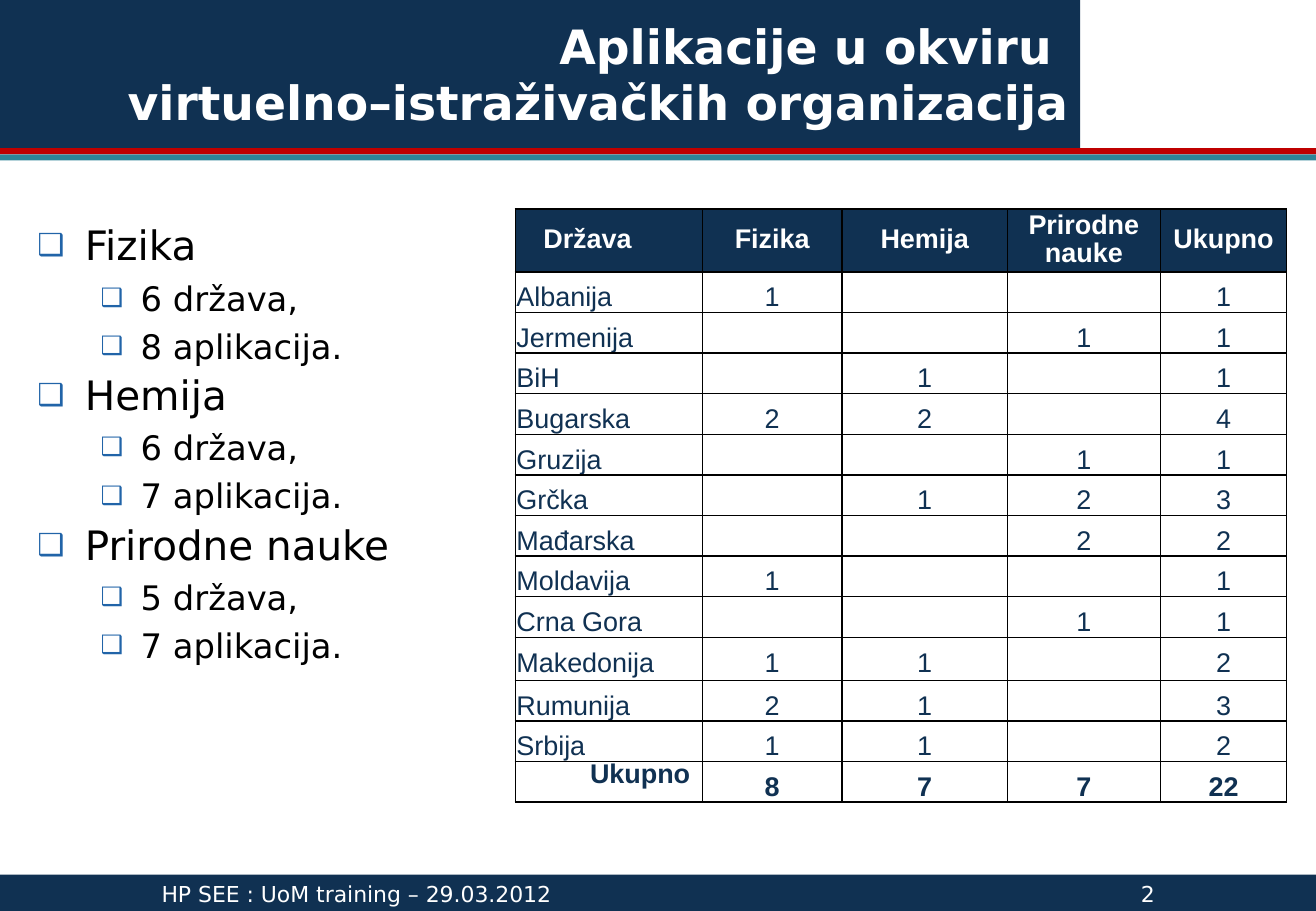
from dataclasses import dataclass

from lxml.etree import SubElement
from pptx import Presentation
from pptx.dml.color import RGBColor
from pptx.enum.shapes import MSO_SHAPE
from pptx.enum.text import MSO_ANCHOR, MSO_AUTO_SIZE, PP_ALIGN
from pptx.oxml.ns import qn
from pptx.util import Inches, Pt


@dataclass(frozen=True)
class Theme:
    navy: str = "103152"
    teal: str = "2E8497"
    red: str = "BF0000"
    blue: str = "2164A8"
    white: str = "FFFFFF"
    black: str = "000000"
    sans: str = "DejaVu Sans"
    grid: str = "Arial"
    title: int = 28
    topic: int = 24
    point: int = 20
    cell: int = 16
    foot: int = 13


THEME = Theme()
TITLE = "Aplikacije u okviru \vvirtuelno–istraživačkih organizacija"
TOPICS = [("Fizika", 6, 8), ("Hemija", 6, 7), ("Prirodne nauke", 5, 7)]
HEADS = ["Država", "Fizika", "Hemija", "Prirodne nauke", "Ukupno"]
LANDS = [
    ("Albanija", 1, 0, 0),
    ("Jermenija", 0, 0, 1),
    ("BiH", 0, 1, 0),
    ("Bugarska", 2, 2, 0),
    ("Gruzija", 0, 0, 1),
    ("Grčka", 0, 1, 2),
    ("Mađarska", 0, 0, 2),
    ("Moldavija", 1, 0, 0),
    ("Crna Gora", 0, 0, 1),
    ("Makedonija", 1, 1, 0),
    ("Rumunija", 2, 1, 0),
    ("Srbija", 1, 1, 0),
]
WIDTHS = [1.54, 1.15, 1.36, 1.26, 1.04]
HEIGHTS = [0.52] + [0.33] * 8 + [0.34, 0.35] + [0.33] * 3


def put(para, text, size, color, font=THEME.sans, bold=False,
        align=PP_ALIGN.LEFT, line=None, before=None):
    para.text = text
    para.alignment = align
    if line:
        para.line_spacing = line
    if before:
        para.space_before = Pt(before)
    for run in para.runs:
        run.font.size = Pt(size)
        run.font.name = font
        run.font.bold = bold
        run.font.color.rgb = RGBColor.from_string(color)


def paint(item, color):
    item.fill.solid()
    item.fill.fore_color.rgb = RGBColor.from_string(color)


def mark(para, left, hang):
    """Give the paragraph a coloured box bullet with a hanging indent."""
    props = para._p.get_or_add_pPr()
    props.set("marL", str(Inches(left)))
    props.set("indent", str(Inches(-hang)))
    tint = SubElement(props, qn("a:buClr"))
    SubElement(tint, qn("a:srgbClr"), val=THEME.blue)
    SubElement(props, qn("a:buSzPct"), val="75000")
    SubElement(props, qn("a:buFont"), typeface=THEME.sans)
    SubElement(props, qn("a:buChar"), char="❑")


def edge(cell):
    """Draw a thin line on all four sides of the cell."""
    props = cell._tc.get_or_add_tcPr()
    for spot, side in enumerate(("lnL", "lnR", "lnT", "lnB")):
        line = props.makeelement(qn(f"a:{side}"), {"w": str(Pt(1))})
        fill = SubElement(line, qn("a:solidFill"))
        SubElement(fill, qn("a:srgbClr"), val=THEME.black)
        props.insert(spot, line)


class Page:
    def __init__(self, deck, theme):
        self.theme = theme
        self.slide = deck.slides.add_slide(deck.slide_layouts[5])

    def bar(self, top, height, color):
        bar = self.slide.shapes.add_shape(
            MSO_SHAPE.RECTANGLE, 0, Inches(top), Inches(10.83), Inches(height))
        bar.shadow.inherit = False
        paint(bar, color)
        bar.line.fill.background()
        return bar

    def title(self, text):
        head = self.slide.shapes.title
        head.left, head.top = Inches(-0.01), Inches(-0.01)
        head.width, head.height = Inches(8.9), Inches(1.23)
        paint(head, self.theme.navy)
        frame = head.text_frame
        frame.auto_size = MSO_AUTO_SIZE.NONE
        frame.vertical_anchor = MSO_ANCHOR.MIDDLE
        put(frame.paragraphs[0], text, self.theme.title, self.theme.white,
            bold=True, align=PP_ALIGN.RIGHT)

    def topics(self, topics):
        box = self.slide.shapes.add_textbox(
            Inches(0.21), Inches(1.81), Inches(3.82), Inches(5.38))
        frame = box.text_frame
        frame.word_wrap = True
        for spot, (name, lands, apps) in enumerate(topics):
            para = frame.add_paragraph() if spot else frame.paragraphs[0]
            mark(para, 0.39, 0.39)
            put(para, name, self.theme.topic, self.theme.black,
                line=0.9, before=5.6 if spot else None)
            for text in (f"{lands} država,", f"{apps} aplikacija."):
                para = frame.add_paragraph()
                para.level = 1
                mark(para, 0.85, 0.33)
                put(para, text, self.theme.point, self.theme.black, before=4.6)

    def table(self, rows):
        last = len(rows) - 1
        table = self.slide.shapes.add_table(
            len(rows), len(WIDTHS), Inches(4.24), Inches(1.72),
            Inches(sum(WIDTHS)), Inches(sum(HEIGHTS))).table
        table.first_row = table.horz_banding = False
        for col, width in zip(table.columns, WIDTHS):
            col.width = Inches(width)
        for r, (row, height) in enumerate(zip(rows, HEIGHTS)):
            table.rows[r].height = Inches(height)
            for c, value in enumerate(row):
                cell = table.cell(r, c)
                cell.margin_left = cell.margin_right = Inches(0.01)
                cell.margin_top = cell.margin_bottom = 0
                paint(cell, self.theme.white if r else self.theme.navy)
                edge(cell)
                align, line = PP_ALIGN.CENTER, 24
                if r == 0:
                    cell.vertical_anchor = MSO_ANCHOR.MIDDLE
                    line = 16.5
                elif c == 0 and r == last:
                    align, line = PP_ALIGN.RIGHT, 16.5
                elif c == 0:
                    align = PP_ALIGN.LEFT
                put(cell.text_frame.paragraphs[0], str(value or ""),
                    self.theme.cell,
                    self.theme.navy if r else self.theme.white,
                    font=self.theme.grid, bold=r in (0, last),
                    align=align, line=Pt(line))
        table.cell(0, 0).margin_right = Inches(0.36)
        table.cell(last, 0).margin_right = Inches(0.1)

    def foot(self, text, page):
        bar = self.bar(7.2, 0.32, self.theme.navy)
        frame = bar.text_frame
        frame.margin_left = Inches(1.33)
        frame.vertical_anchor = MSO_ANCHOR.MIDDLE
        para = frame.paragraphs[0]
        tabs = SubElement(para._p.get_or_add_pPr(), qn("a:tabLst"))
        SubElement(tabs, qn("a:tab"), pos=str(Inches(8.06)), algn="l")
        put(para, f"{text}\t{page}", self.theme.foot, self.theme.white)


def main():
    deck = Presentation()
    deck.slide_width, deck.slide_height = Inches(10.83), Inches(7.5)
    page = Page(deck, THEME)
    page.bar(1.27, 0.05, THEME.teal)
    page.bar(1.22, 0.05, THEME.red)
    page.title(TITLE)
    page.topics(TOPICS)
    body = [(*land, sum(land[1:])) for land in LANDS]
    sums = [sum(col) for col in list(zip(*body))[1:]]
    page.table([HEADS, *body, ["Ukupno", *sums]])
    page.foot("HP SEE : UoM training – 29.03.2012", 2)
    deck.save("out.pptx")


if __name__ == "__main__":
    main()
